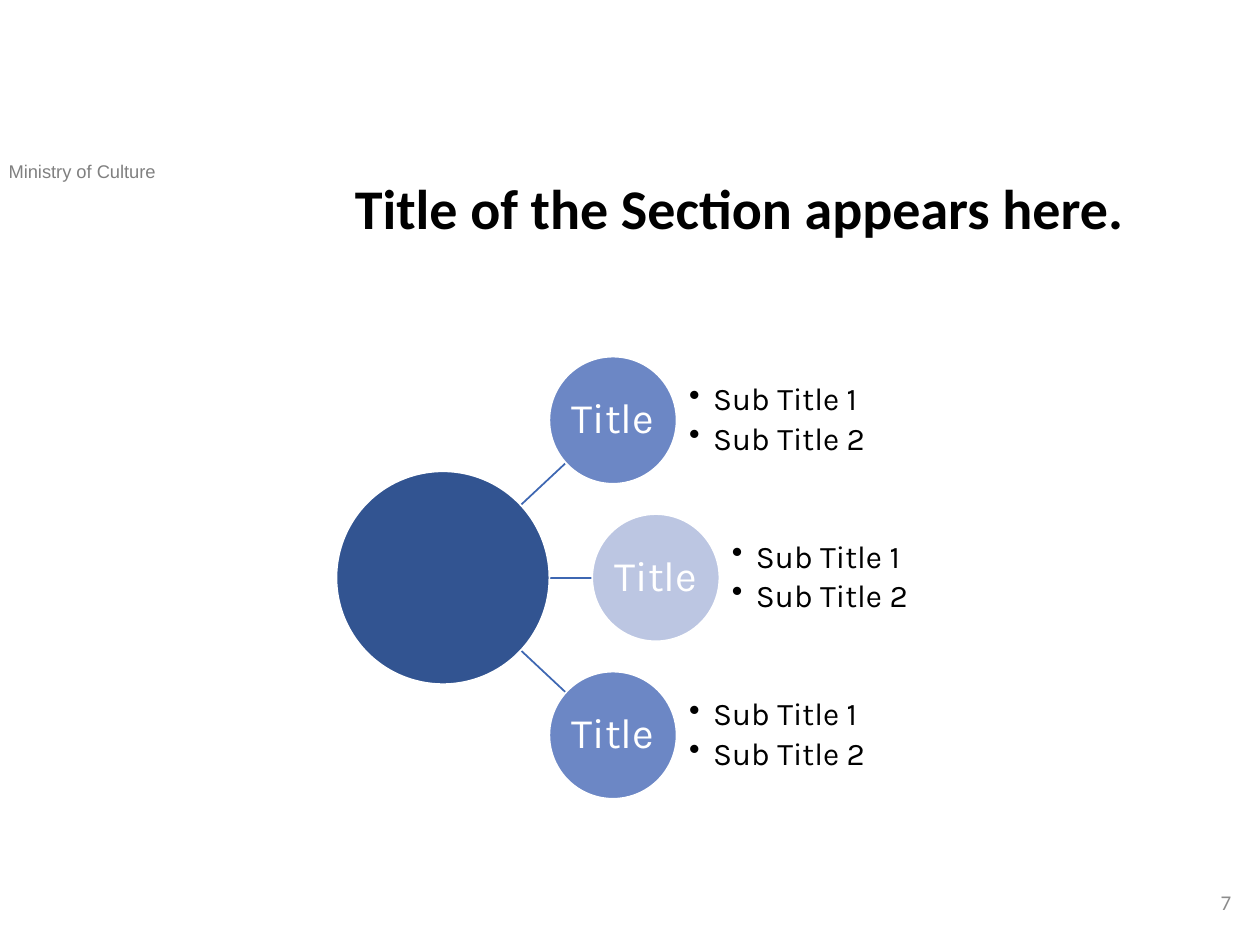
from dataclasses import dataclass

from lxml import etree
from pptx import Presentation
from pptx.dml.color import RGBColor
from pptx.enum.shapes import MSO_CONNECTOR, MSO_SHAPE
from pptx.enum.text import MSO_ANCHOR, PP_ALIGN
from pptx.oxml.ns import qn
from pptx.util import Inches, Pt


@dataclass(frozen=True)
class Theme:
    black: str = "000000"
    white: str = "FFFFFF"
    gray: str = "808080"
    number_gray: str = "8C8C8C"
    hub: str = "325491"
    node: str = "6C87C5"
    pale_node: str = "BCC6E2"
    spoke: str = "3E67B2"
    heading_size: float = 32
    node_size: float = 24
    list_size: float = 18
    number_size: float = 12
    header_size: float = 10.5


THEME = Theme()
NODES = [
    ("Title", THEME.node, ["Sub Title 1", "Sub Title 2"]),
    ("Title", THEME.pale_node, ["Sub Title 1", "Sub Title 2"]),
    ("Title", THEME.node, ["Sub Title 1", "Sub Title 2"]),
]


def set_font(paragraph, name, size, color, bold=False):
    font = paragraph.font
    font.name, font.size, font.bold = name, Pt(size), bold
    font.color.rgb = RGBColor.from_string(color)


def add_label(slide, box, text, font, align=PP_ALIGN.LEFT, anchor=MSO_ANCHOR.TOP):
    """Add a one-paragraph text box; font holds name, size, color and bold."""
    frame = slide.shapes.add_textbox(*map(Inches, box)).text_frame
    frame.word_wrap = True
    frame.vertical_anchor = anchor
    paragraph = frame.paragraphs[0]
    paragraph.text = text
    paragraph.alignment = align
    set_font(paragraph, *font)
    return paragraph


def set_margins(frame, margin):
    frame.margin_left = frame.margin_right = Inches(margin)
    frame.margin_top = frame.margin_bottom = Inches(margin)


def add_circle(slide, center_x, center_y, diameter, color):
    left, top = center_x - diameter / 2, center_y - diameter / 2
    circle = slide.shapes.add_shape(
        MSO_SHAPE.OVAL, *map(Inches, (left, top, diameter, diameter)))
    circle.shadow.inherit = False
    circle.fill.solid()
    circle.fill.fore_color.rgb = RGBColor.from_string(color)
    circle.line.color.rgb = RGBColor.from_string(THEME.white)
    circle.line.width = Pt(1)
    return circle


def add_spoke(slide, start, end):
    spoke = slide.shapes.add_connector(
        MSO_CONNECTOR.STRAIGHT, *map(Inches, (*start, *end)))
    spoke.line.color.rgb = RGBColor.from_string(THEME.spoke)
    spoke.line.width = Pt(1)
    etree.SubElement(spoke._element.spPr, qn("a:effectLst"))


def add_node(slide, center_x, center_y, diameter, title, color):
    frame = add_circle(slide, center_x, center_y, diameter, color).text_frame
    set_margins(frame, 0.02)
    frame.word_wrap = False
    frame.vertical_anchor = MSO_ANCHOR.MIDDLE
    paragraph = frame.paragraphs[0]
    paragraph.text = title
    paragraph.alignment = PP_ALIGN.CENTER
    paragraph.line_spacing = 0.9
    set_font(paragraph, "Karla", THEME.node_size, THEME.white)


def add_bullets(slide, box, items):
    frame = slide.shapes.add_textbox(*map(Inches, box)).text_frame
    set_margins(frame, 0)
    frame.word_wrap = True
    frame.vertical_anchor = MSO_ANCHOR.MIDDLE
    for index, item in enumerate(items):
        paragraph = frame.add_paragraph() if index else frame.paragraphs[0]
        paragraph.text = item
        paragraph.line_spacing = 0.9
        paragraph.space_after = Pt(3)
        properties = paragraph._p.get_or_add_pPr()
        properties.set("marL", str(Inches(0.19)))
        properties.set("indent", str(-Inches(0.19)))
        etree.SubElement(properties, qn("a:buChar"), char="•")
        set_font(paragraph, "Karla", THEME.list_size, THEME.black)


def add_radial_diagram(slide, box, nodes):
    """Place a hub at the left, with nodes and their lists fanned out beside it."""
    left, top, width, height = box
    hub_size, node_size, gap = 1.69, 1.01, 0.1
    hub_x, hub_y = left + hub_size / 2, top + height / 2
    step = (height - node_size) / (len(nodes) - 1)
    middle = (len(nodes) - 1) / 2

    placed = []
    for index, node in enumerate(nodes):
        offset = index - middle
        node_left = left + 2.03 - 0.34 * abs(offset)
        placed.append((node_left, hub_y + offset * step, node))
        add_spoke(slide, (hub_x + 0.59, hub_y + 0.55 * offset),
                  (node_left + 0.13 * abs(offset), hub_y + 0.91 * offset))

    add_circle(slide, hub_x, hub_y, hub_size, THEME.hub)
    for node_left, center_y, (title, color, items) in placed:
        add_node(slide, node_left + node_size / 2, center_y, node_size, title, color)
        list_left = node_left + node_size + gap
        add_bullets(slide, (list_left, center_y - node_size / 2,
                            1.5 * node_size, node_size), items)


def main():
    presentation = Presentation()
    presentation.slide_width, presentation.slide_height = Inches(10), Inches(7.5)
    slide = presentation.slides.add_slide(presentation.slide_layouts[6])

    add_label(slide, (-0.03, 1.22, 2.18, 0.28), "Ministry of Culture",
              ("Arial", THEME.header_size, THEME.gray))
    add_radial_diagram(slide, (2.67, 2.83, 4.66, 3.51), NODES)
    add_label(slide, (7.62, 6.96, 2.25, 0.4), "7",
              ("Calibri", THEME.number_size, THEME.number_gray),
              PP_ALIGN.RIGHT, MSO_ANCHOR.MIDDLE)
    heading = add_label(slide, (2.64, 1.39, 6.46, 0.79),
                        "Title of the Section appears here.",
                        ("Calibri", THEME.heading_size, THEME.black, True),
                        PP_ALIGN.CENTER)
    heading.line_spacing = 0.9
    presentation.save("out.pptx")


if __name__ == "__main__":
    main()
